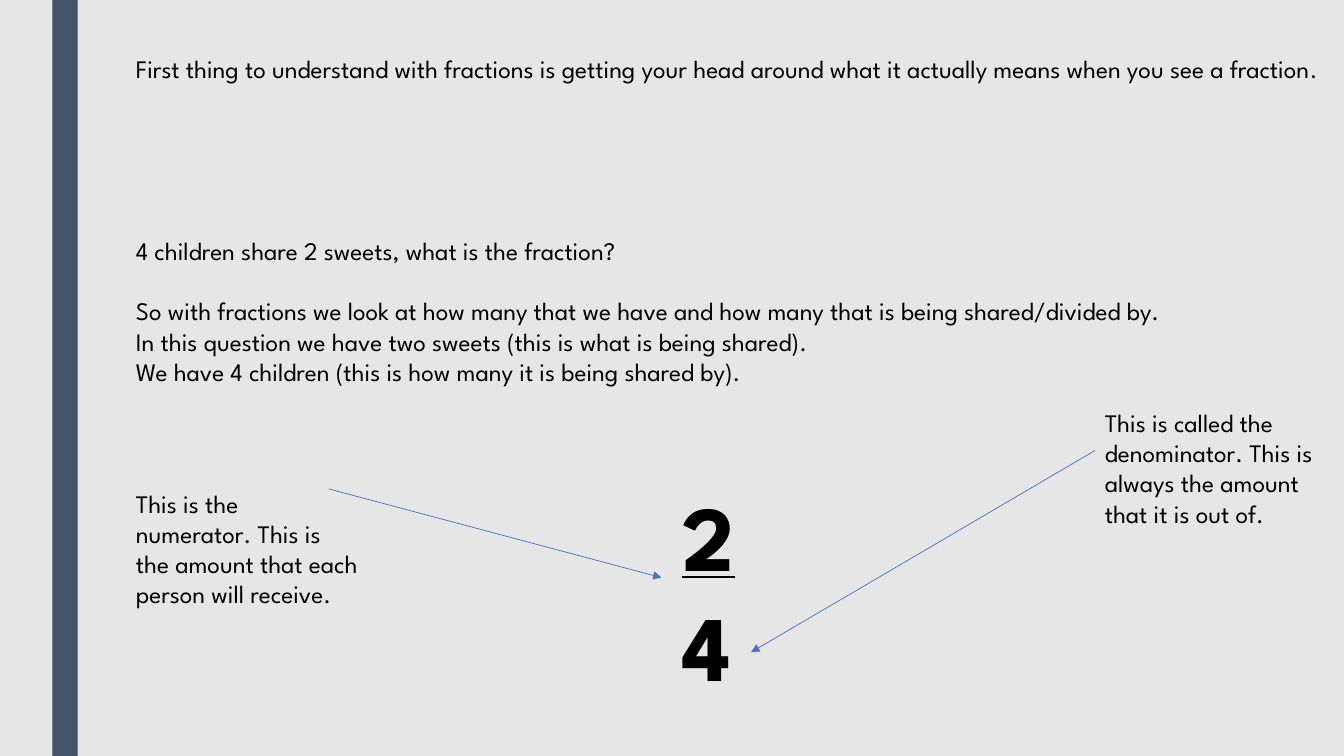
from lxml import etree
from pptx import Presentation, util as u
from pptx.dml.color import RGBColor
from pptx.enum import shapes
from pptx.oxml.ns import qn


def colour(hex_string):
    return RGBColor.from_string(hex_string)


class FractionSlide:
    font = "League Spartan"
    ink = "000000"
    background = "E7E6E6"
    stripe = "44546A"
    arrow_line = "4472C4"

    def __init__(self, presentation):
        self.slide = presentation.slides.add_slide(presentation.slide_layouts[6])
        fill = self.slide.background.fill
        fill.solid()
        fill.fore_color.rgb = colour(self.background)

    def bar(self, left, top, width, height):
        shape = self.slide.shapes.add_shape(
            shapes.MSO_SHAPE.RECTANGLE, *map(u.Inches, (left, top, width, height)))
        shape.shadow.inherit = False
        shape.fill.solid()
        shape.fill.fore_color.rgb = colour(self.stripe)
        shape.line.fill.background()

    def text(self, left, top, width, height, lines, size=18, bold=False):
        """Add a text box and return its paragraphs."""
        box = self.slide.shapes.add_textbox(*map(u.Inches, (left, top, width, height)))
        frame = box.text_frame
        frame.word_wrap = True
        frame.text = "\n".join(lines)
        for paragraph in frame.paragraphs:
            font = paragraph.font
            font.name = self.font
            font.size = u.Pt(size)
            font.bold = bold
            font.color.rgb = colour(self.ink)
        return frame.paragraphs

    def arrow(self, start, end):
        connector = self.slide.shapes.add_connector(
            shapes.MSO_CONNECTOR.STRAIGHT, *map(u.Inches, start + end))
        connector.line.color.rgb = colour(self.arrow_line)
        connector.line.width = u.Pt(0.5)
        line = connector.line._get_or_add_ln()
        etree.SubElement(line, qn("a:tailEnd"), type="triangle")
        etree.SubElement(connector._element.spPr, qn("a:effectLst"))


def main():
    presentation = Presentation()
    presentation.slide_width = u.Inches(13.33)
    presentation.slide_height = u.Inches(7.5)
    page = FractionSlide(presentation)

    # Side stripe
    page.bar(0.52, 0, 0.25, 7.5)

    # Explanation
    explanation = page.text(1.25, 0.48, 11.97, 4.64, [
        "First thing to understand with fractions is getting your head around "
        "what it actually means when you see a fraction",
        "4 children share 2 sweets, what is the fraction?",
        "So with fractions we look at how many that we have and how many that "
        "is being shared/divided by.",
        "In this question we have two sweets (this is what is being shared).",
        "We have 4 children (this is how many it is being shared by).",
    ])
    full_stop = explanation[0].add_run()
    full_stop.text = "."
    full_stop.font.name = "Calibri"
    explanation[1].space_before = u.Pt(108.5)
    explanation[2].space_before = u.Pt(21.5)

    # Fraction
    numerator, _ = page.text(6.67, 4.7, 0.78, 2.32, ["2", "4"], size=66, bold=True)
    numerator.runs[0].font.underline = True

    # Denominator note
    page.arrow((10.86, 4.47), (7.45, 6.47))
    page.text(10.86, 3.99, 2.36, 1.62, [
        "This is called the denominator. This is always the amount that it is out of."])

    # Numerator note
    page.arrow((3.26, 4.85), (6.56, 5.73))
    page.text(1.25, 4.79, 2.42, 1.62, [
        "This is the numerator. This is the amount that each person will receive."])

    presentation.save("out.pptx")


if __name__ == "__main__":
    main()
